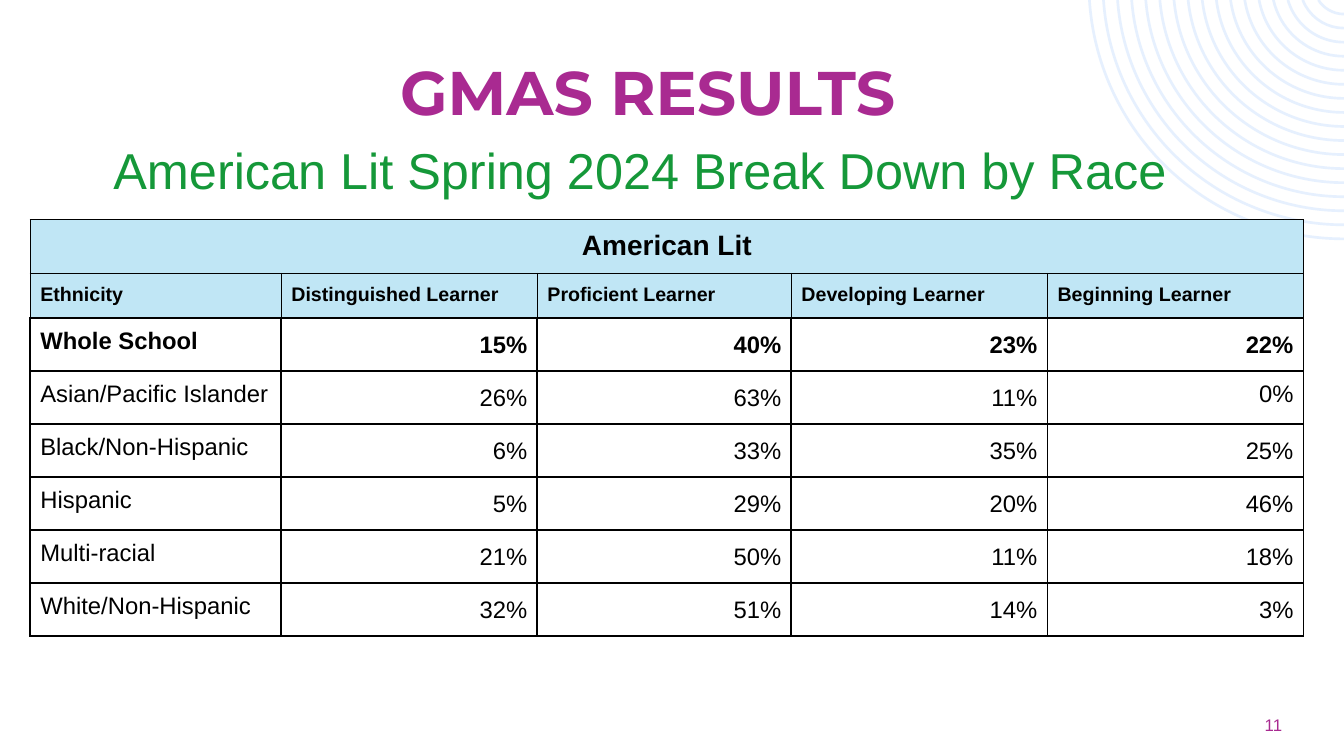
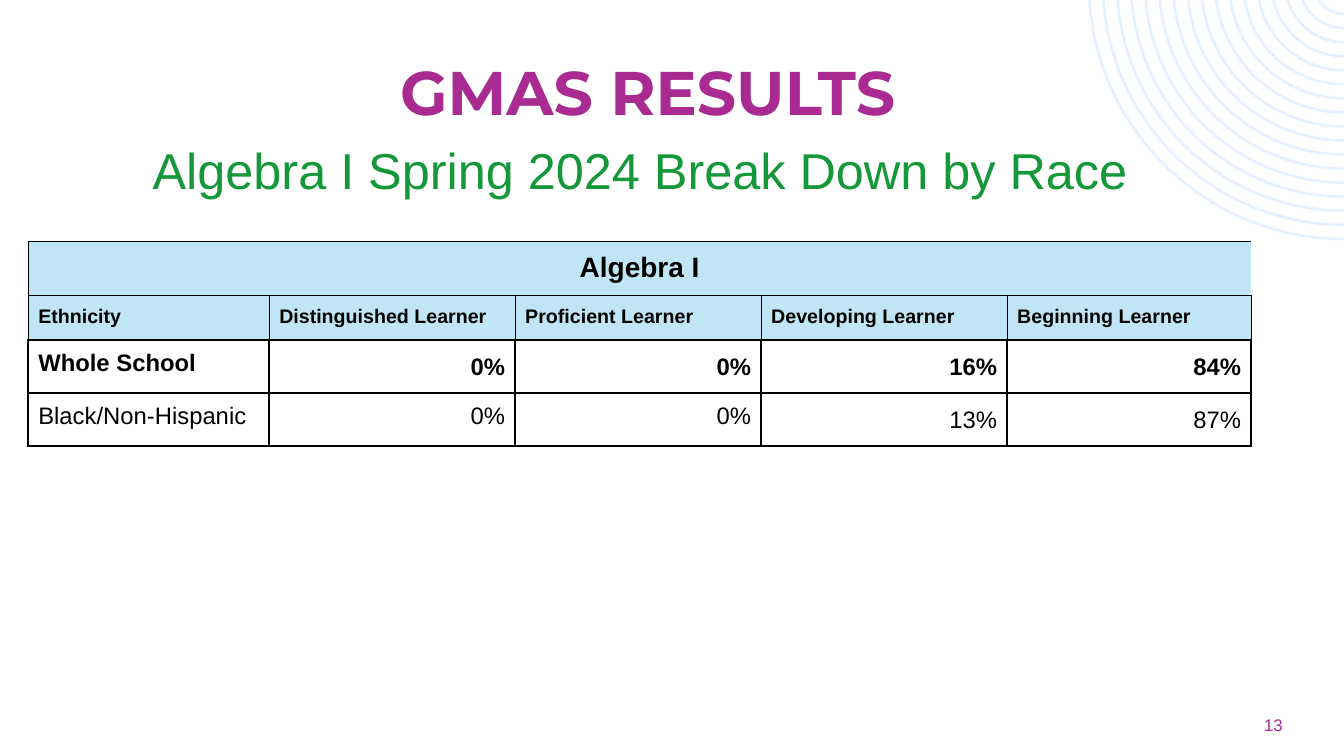
from dataclasses import dataclass
from math import asin, cos, degrees

from lxml.etree import SubElement
from pptx import Presentation
from pptx.dml.color import RGBColor
from pptx.enum.text import MSO_ANCHOR as Anchor, PP_ALIGN as Align
from pptx.oxml.ns import qn
from pptx.util import Inches, Pt

HEADING = "GMAS RESULTS"
COLUMNS = ["Ethnicity", "Distinguished Learner", "Proficient Learner",
           "Developing Learner", "Beginning Learner"]
RESULTS = [
    {
        "course": "American Lit",
        "page": "11",
        "corner": (0.3, 2.18),
        "widths": [2.49, 2.54, 2.52, 2.54, 2.54],
        "closed_title": True,
        "groups": [
            ("Whole School", 15, 40, 23, 22),
            ("Asian/Pacific Islander", 26, 63, 11, 0),
            ("Black/Non-Hispanic", 6, 33, 35, 25),
            ("Hispanic", 5, 29, 20, 46),
            ("Multi-racial", 21, 50, 11, 18),
            ("White/Non-Hispanic", 32, 51, 14, 3),
        ],
    },
    {
        "course": "Algebra I",
        "page": "13",
        "corner": (0.28, 2.4),
        "widths": [2.39, 2.44, 2.44, 2.44, 2.42],
        "closed_title": False,
        "groups": [
            ("Whole School", 0, 0, 16, 84),
            ("Black/Non-Hispanic", 0, 0, 13, 87),
        ],
    },
]


@dataclass(frozen=True)
class Theme:
    purple: str = "A92A91"
    green: str = "159839"
    black: str = "000000"
    header: str = "C0E6F5"
    rings: str = "E6F0FE"
    display: str = "Montserrat"
    body: str = "Arial"
    heading_size: int = 44
    subtitle_size: int = 36
    course_size: int = 20
    column_size: int = 14
    group_size: int = 17
    page_size: int = 12
    thin: float = 0.94
    thick: float = 1.5
    ring: float = 1.9


THEME = Theme()
WIDTH, HEIGHT = 13.33, 7.5
COURSE_ROW, COLUMN_ROW, GROUP_ROW = 0.53, 0.44, 0.52
RING_COUNT, RING_RISE = 17, 0.16
INNER_RADIUS, OUTER_RADIUS = 0.3, 2.53


def write(frame, text, size, color, font=THEME.body, bold=False, align=Align.LEFT):
    paragraph = frame.paragraphs[0]
    paragraph.alignment = align
    run = paragraph.add_run()
    run.text = text
    run.font.size = Pt(size)
    run.font.name = font
    run.font.bold = bold
    run.font.color.rgb = RGBColor.from_string(color)
    return paragraph


def add_line(slide, box, text, size, color, anchor=Anchor.TOP, **style):
    frame = slide.shapes.add_textbox(*map(Inches, box)).text_frame
    frame.word_wrap = True
    frame.vertical_anchor = anchor
    write(frame, text, size, color, align=Align.CENTER, **style)


def add_rings(slide):
    step = (OUTER_RADIUS - INNER_RADIUS) / (RING_COUNT - 1)
    radii = [OUTER_RADIUS - ring * step for ring in range(RING_COUNT)]
    starts = [asin(RING_RISE / radius) for radius in radii]
    builder = None
    for radius, start in zip(radii, starts):
        top = Inches(WIDTH - radius * cos(start)), 0
        if builder is None:
            builder = slide.shapes.build_freeform(*top)
        else:
            builder.move_to(*top)
        builder.add_line_segments([(Inches(WIDTH), Inches(radius - RING_RISE))],
                                  close=False)
    rings = builder.convert_to_shape()
    chords = list(rings.element.iter(qn("a:lnTo")))
    for chord, radius, start in zip(chords, radii, starts):
        contour = chord.getparent()
        angle = degrees(start)
        reach = str(Inches(radius))
        arc = SubElement(contour, qn("a:arcTo"), wR=reach, hR=reach,
                         stAng=str(round((180 - angle) * 60000)),
                         swAng=str(round((angle - 90) * 60000)))
        contour.replace(chord, arc)
    rings.shadow.inherit = False
    rings.fill.background()
    rings.line.color.rgb = RGBColor.from_string(THEME.rings)
    rings.line.width = Pt(THEME.ring)
    return rings


def style_cell(cell, fill=None, **edges):
    cell.margin_left = cell.margin_right = Inches(0.1)
    cell.margin_top = cell.margin_bottom = Inches(0.1)
    properties = cell._tc.get_or_add_tcPr()
    for side in "LRTB":
        width = edges.get(side, THEME.thick)
        edge = SubElement(properties, qn(f"a:ln{side}"), w=str(Pt(width)))
        if width:
            paint = SubElement(edge, qn("a:solidFill"))
            SubElement(paint, qn("a:srgbClr"), val=THEME.black)
        else:
            SubElement(edge, qn("a:noFill"))
    if fill:
        cell.fill.solid()
        cell.fill.fore_color.rgb = RGBColor.from_string(fill)
    else:
        cell.fill.background()


def add_results(slide, result):
    heights = [COURSE_ROW, COLUMN_ROW] + [GROUP_ROW] * len(result["groups"])
    size = sum(result["widths"]), sum(heights)
    table = slide.shapes.add_table(len(heights), len(COLUMNS),
                                   *map(Inches, result["corner"] + size)).table
    table.first_row = table.horz_banding = False
    for column, width in zip(table.columns, result["widths"]):
        column.width = Inches(width)
    for row, height in zip(table.rows, heights):
        row.height = Inches(height)

    thin = dict.fromkeys("LRT", THEME.thin)
    title_edges = {**thin, "B": THEME.thin}
    if not result["closed_title"]:
        title_edges["R"] = 0
    for index, label in enumerate(COLUMNS):
        style_cell(table.cell(0, index), THEME.header, **title_edges)
        heading = table.cell(1, index)
        style_cell(heading, THEME.header, **thin)
        write(heading.text_frame, label, THEME.column_size, THEME.black, bold=True)
    course = table.cell(0, 0)
    course.merge(table.cell(0, len(COLUMNS) - 1))
    write(course.text_frame, result["course"], THEME.course_size, THEME.black,
          bold=True, align=Align.CENTER)

    for row, (group, *shares) in enumerate(result["groups"], start=2):
        whole = row == 2
        name = table.cell(row, 0)
        style_cell(name)
        write(name.text_frame, group, THEME.group_size, THEME.black, bold=whole)
        for column, share in enumerate(shares, start=1):
            cell = table.cell(row, column)
            style_cell(cell)
            paragraph = write(cell.text_frame, f"{share}%", THEME.group_size,
                              THEME.black, bold=whole, align=Align.RIGHT)
            if whole or share:
                paragraph.line_spacing = 1.15


def main():
    deck = Presentation()
    deck.slide_width, deck.slide_height = Inches(WIDTH), Inches(HEIGHT)
    blank = deck.slide_layouts[6]
    for result in RESULTS:
        slide = deck.slides.add_slide(blank)
        if result is RESULTS[0]:
            blank.shapes.element.append(add_rings(slide).element)
        add_line(slide, (12.09, 7.04, 1.08, 0.3), result["page"],
                 THEME.page_size, THEME.purple, Anchor.MIDDLE)
        add_line(slide, (0.59, 0.49, 11.67, 0.84), HEADING, THEME.heading_size,
                 THEME.purple, font=THEME.display, bold=True)
        add_line(slide, (0.93, 1.33, 10.84, 0.71),
                 f"{result['course']} Spring 2024 Break Down by Race",
                 THEME.subtitle_size, THEME.green)
        add_results(slide, result)
    deck.save("out.pptx")


if __name__ == "__main__":
    main()
